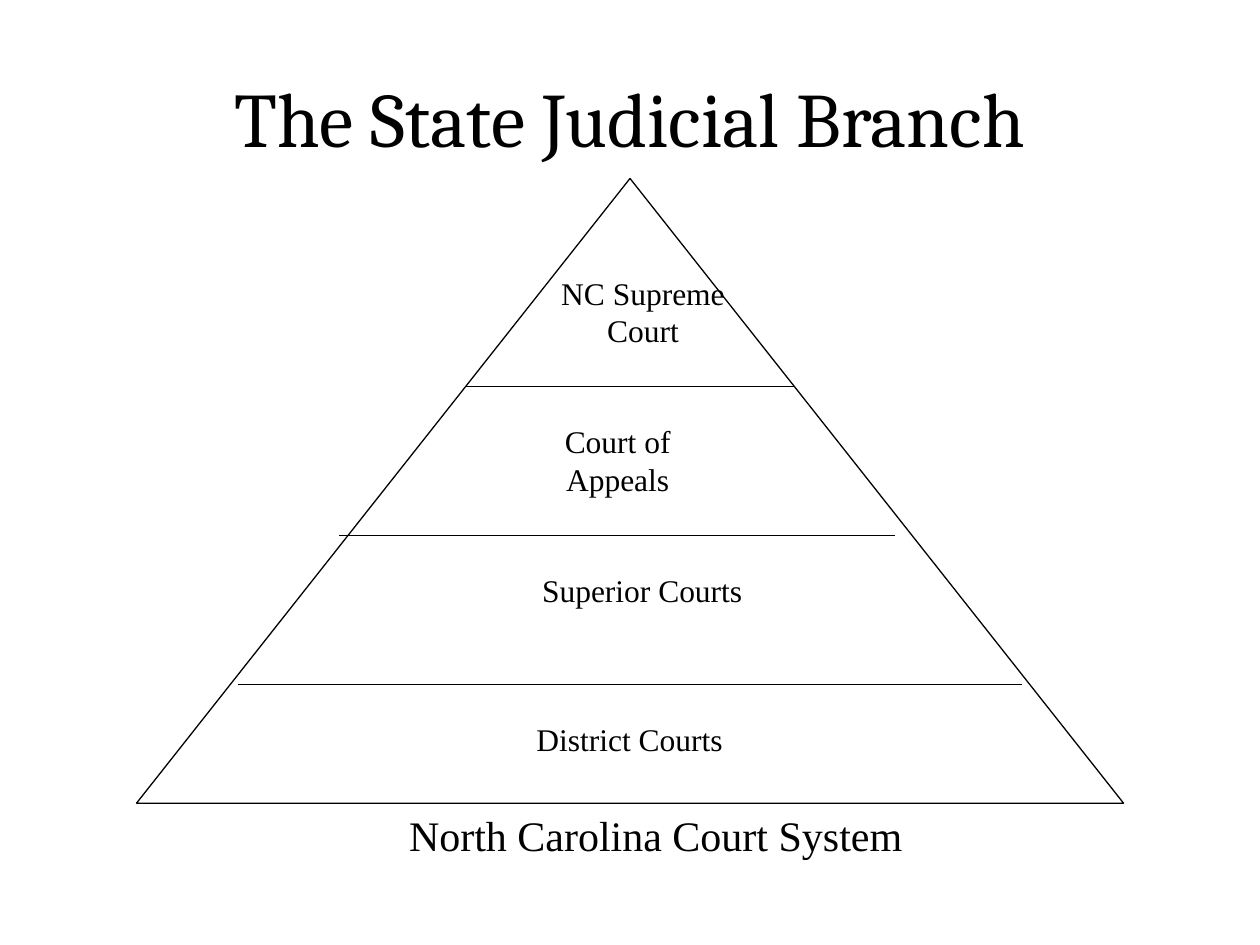
from dataclasses import dataclass

from lxml import etree
from pptx import Presentation
from pptx.dml.color import RGBColor
from pptx.enum import shapes, text
from pptx.oxml.ns import qn
from pptx.util import Pt


@dataclass(frozen=True)
class Theme:
    ink: RGBColor = RGBColor(0, 0, 0)
    paper: RGBColor = RGBColor(255, 255, 255)
    title_font: str = "Cambria"
    body_font: str = "Times New Roman"
    title_size: float = 44
    caption_size: float = 24
    label_size: float = 18
    line_width: float = 0.75


@dataclass(frozen=True)
class Label:
    words: str
    left: float
    top: float
    width: float
    height: float
    size: float
    font: str
    anchor: text.MSO_ANCHOR = text.MSO_ANCHOR.TOP


@dataclass(frozen=True)
class Divider:
    left: float
    right: float


THEME = Theme()
CENTER = 360
TIER_HEIGHT = 85  # distance from one divider or court label to the next
FIRST_DIVIDER_TOP = 221
FIRST_LABEL_TOP = 152.8

DIVIDERS = [Divider(265.8, 454.2), Divider(193.8, 511.7), Divider(135.8, 584)]

# Court name, left and width of its label, from highest court to lowest
COURTS = [
    ("NC Supreme Court", 309.5, 116),
    ("Court of Appeals", 295, 116),
    ("Superior Courts", 266, 202),
    ("District Courts", 237, 245.5),
]


def add_label(parent, label: Label) -> None:
    box = parent.add_textbox(
        Pt(label.left), Pt(label.top), Pt(label.width), Pt(label.height))
    frame = box.text_frame
    frame.word_wrap = True
    frame.vertical_anchor = label.anchor
    frame.text = label.words
    paragraph = frame.paragraphs[0]
    paragraph.alignment = text.PP_ALIGN.CENTER
    font = paragraph.runs[0].font
    font.name = label.font
    font.size = Pt(label.size)
    font.color.rgb = THEME.ink


def add_pyramid(parent) -> None:
    width, height = 564, 357
    pyramid = parent.add_shape(
        shapes.MSO_SHAPE.ISOSCELES_TRIANGLE,
        Pt(CENTER - width / 2), Pt(102), Pt(width), Pt(height))
    pyramid.shadow.inherit = False
    pyramid.fill.solid()
    pyramid.fill.fore_color.rgb = THEME.paper
    pyramid.line.color.rgb = THEME.ink
    pyramid.line.width = Pt(THEME.line_width)


def add_divider(parent, divider: Divider, top: float) -> None:
    line = parent.add_connector(
        shapes.MSO_CONNECTOR.STRAIGHT,
        Pt(divider.left), Pt(top), Pt(divider.right), Pt(top))
    line.line.color.rgb = THEME.ink
    line.line.width = Pt(THEME.line_width)
    etree.SubElement(line._element.spPr, qn("a:effectLst"))


def main() -> None:
    presentation = Presentation()
    presentation.slide_width, presentation.slide_height = Pt(720), Pt(540)
    slide = presentation.slides.add_slide(presentation.slide_layouts[6])

    # Title
    add_label(slide.shapes, Label(
        "The State Judicial Branch", 36, 21.6, 648, 90,
        THEME.title_size, THEME.title_font, text.MSO_ANCHOR.MIDDLE))

    # Court pyramid with its dividers
    diagram = slide.shapes.add_group_shape().shapes
    add_pyramid(diagram)
    for tier, divider in enumerate(DIVIDERS):
        add_divider(diagram, divider, FIRST_DIVIDER_TOP + tier * TIER_HEIGHT)

    # Court names
    for tier, (court, left, width) in enumerate(COURTS):
        add_label(diagram, Label(
            court, left, FIRST_LABEL_TOP + tier * TIER_HEIGHT, width, 68,
            THEME.label_size, THEME.body_font))

    # Caption below the pyramid
    add_label(diagram, Label(
        "North Carolina Court System", 150.5, 458.8, 448.5, 51,
        THEME.caption_size, THEME.body_font))

    presentation.save("out.pptx")


if __name__ == "__main__":
    main()
